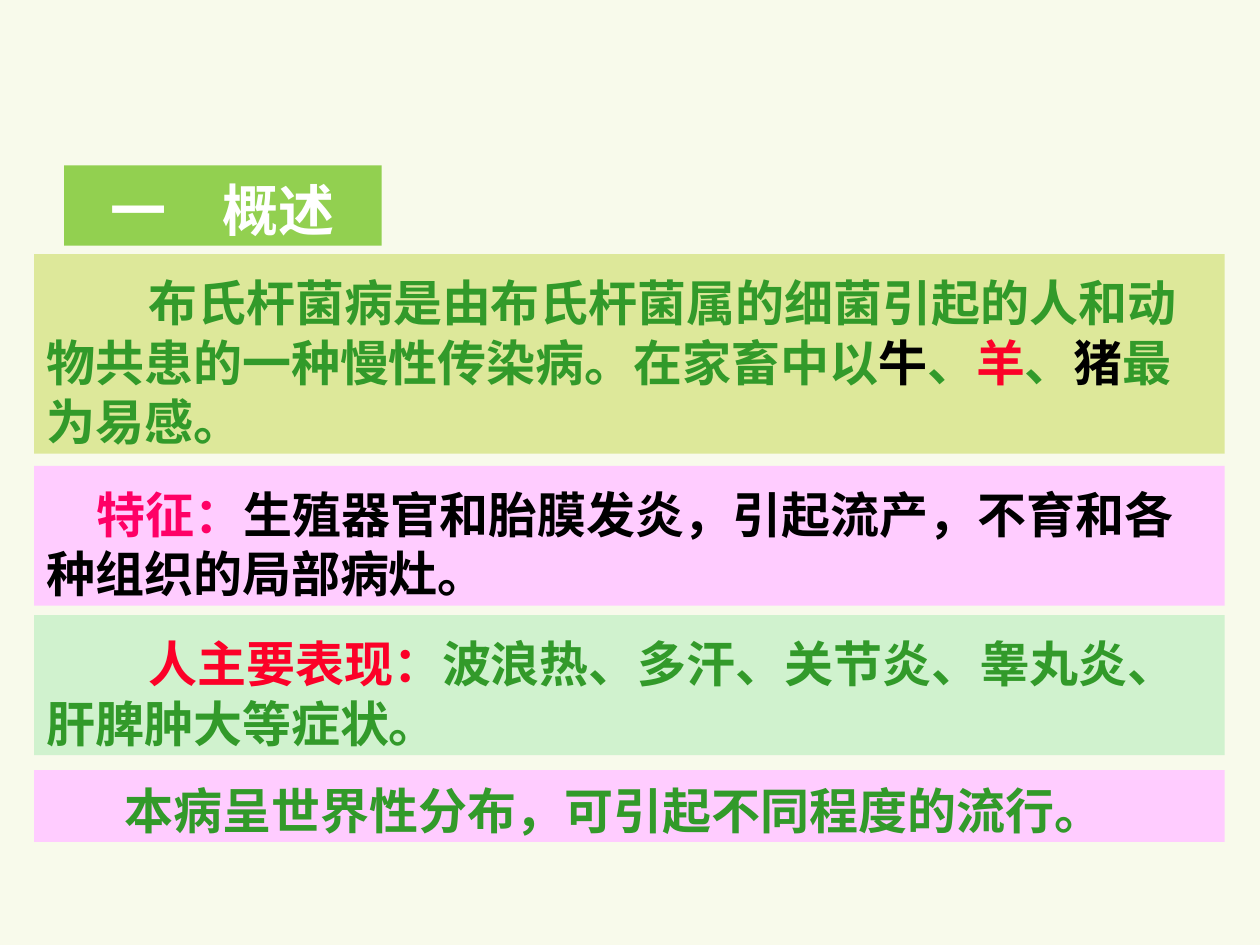
from dataclasses import dataclass

import lxml.etree
import pptx
import pptx.dml.color
import pptx.enum.shapes
import pptx.enum.text
import pptx.oxml.ns
import pptx.slide
import pptx.util


@dataclass(frozen=True)
class Theme:
    background: str = "F8FAEB"
    heading: str = "92D050"
    olive: str = "DDE89A"
    pink: str = "FFCCFF"
    mint: str = "D0F2CE"
    white: str = "FFFFFF"
    black: str = "000000"
    green: str = "329A2A"
    red: str = "FC0128"
    magenta: str = "FF0066"
    latin_font: str = "Arial"
    chinese_font: str = "Noto Sans CJK SC"
    heading_size: int = 32
    body_size: int = 28
    line_ratio: float = 1.21


@dataclass(frozen=True)
class Phrase:
    text: str
    color: str


@dataclass(frozen=True)
class Panel:
    top: float
    height: float
    fill: str
    phrases: tuple[Phrase, ...]
    indent: float = 0
    inset: float = 10.4
    left: float = 0.027
    width: float = 0.945
    size: int = 28
    centered: bool = False


THEME = Theme()
SLIDE_WIDTH = pptx.util.Inches(10)
SLIDE_HEIGHT = pptx.util.Inches(7.5)

PANELS = (
    Panel(0.175, 0.085, THEME.heading, (Phrase("一　概述", THEME.white),),
          inset=5.6, left=0.051, width=0.252, size=THEME.heading_size, centered=True),
    Panel(0.269, 0.211, THEME.olive, (
        Phrase("布氏杆菌病是由布氏杆菌属的细菌引起的人和动物共患的一种慢性传染病。在家畜中以", THEME.green),
        Phrase("牛", THEME.black),
        Phrase("、", THEME.green),
        Phrase("羊", THEME.red),
        Phrase("、", THEME.green),
        Phrase("猪", THEME.black),
        Phrase("最为易感。", THEME.green),
    ), indent=0.081),
    Panel(0.493, 0.148, THEME.pink, (
        Phrase("特征：", THEME.magenta),
        Phrase("生殖器官和胎膜发炎，引起流产，不育和各种组织的局部病灶。", THEME.black),
    ), indent=0.04),
    Panel(0.651, 0.148, THEME.mint, (
        Phrase("人主要表现：", THEME.red),
        Phrase("波浪热、多汗、关节炎、睾丸炎、肝脾肿大等症状。", THEME.green),
    ), indent=0.081),
    Panel(0.815, 0.076, THEME.pink, (
        Phrase("本病呈世界性分布，可引起不同程度的流行。", THEME.green),
    ), indent=0.062, inset=5.6),
)


def rgb(color: str) -> pptx.dml.color.RGBColor:
    return pptx.dml.color.RGBColor.from_string(color)


def add_phrase(paragraph, phrase: Phrase, size: int) -> None:
    run = paragraph.add_run()
    run.text = phrase.text
    run.font.size = pptx.util.Pt(size)
    run.font.bold = True
    run.font.color.rgb = rgb(phrase.color)
    run.font.name = THEME.latin_font
    properties = run._r.get_or_add_rPr()
    east_asian = lxml.etree.SubElement(properties, pptx.oxml.ns.qn("a:ea"))
    east_asian.set("typeface", THEME.chinese_font)


def add_panel(slide: pptx.slide.Slide, panel: Panel) -> None:
    shape = slide.shapes.add_shape(
        pptx.enum.shapes.MSO_SHAPE.RECTANGLE,
        int(panel.left * SLIDE_WIDTH), int(panel.top * SLIDE_HEIGHT),
        int(panel.width * SLIDE_WIDTH), int(panel.height * SLIDE_HEIGHT),
    )
    shape.shadow.inherit = False
    shape.fill.solid()
    shape.fill.fore_color.rgb = rgb(panel.fill)
    shape.line.fill.background()
    text_frame = shape.text_frame
    text_frame.word_wrap = True
    text_frame.vertical_anchor = pptx.enum.text.MSO_ANCHOR.TOP
    text_frame.margin_top = pptx.util.Pt(panel.inset)
    text_frame.margin_bottom = 0
    paragraph = text_frame.paragraphs[0]
    alignment = pptx.enum.text.PP_ALIGN
    paragraph.alignment = alignment.CENTER if panel.centered else alignment.LEFT
    paragraph.line_spacing = pptx.util.Pt(panel.size * THEME.line_ratio)
    paragraph._p.get_or_add_pPr().set("indent", str(int(panel.indent * SLIDE_WIDTH)))
    for phrase in panel.phrases:
        add_phrase(paragraph, phrase, panel.size)


def main() -> None:
    presentation = pptx.Presentation()
    presentation.slide_width = SLIDE_WIDTH
    presentation.slide_height = SLIDE_HEIGHT
    slide = presentation.slides.add_slide(presentation.slide_layouts[6])
    slide.background.fill.solid()
    slide.background.fill.fore_color.rgb = rgb(THEME.background)
    for panel in PANELS:
        add_panel(slide, panel)
    presentation.save("out.pptx")


if __name__ == "__main__":
    main()
